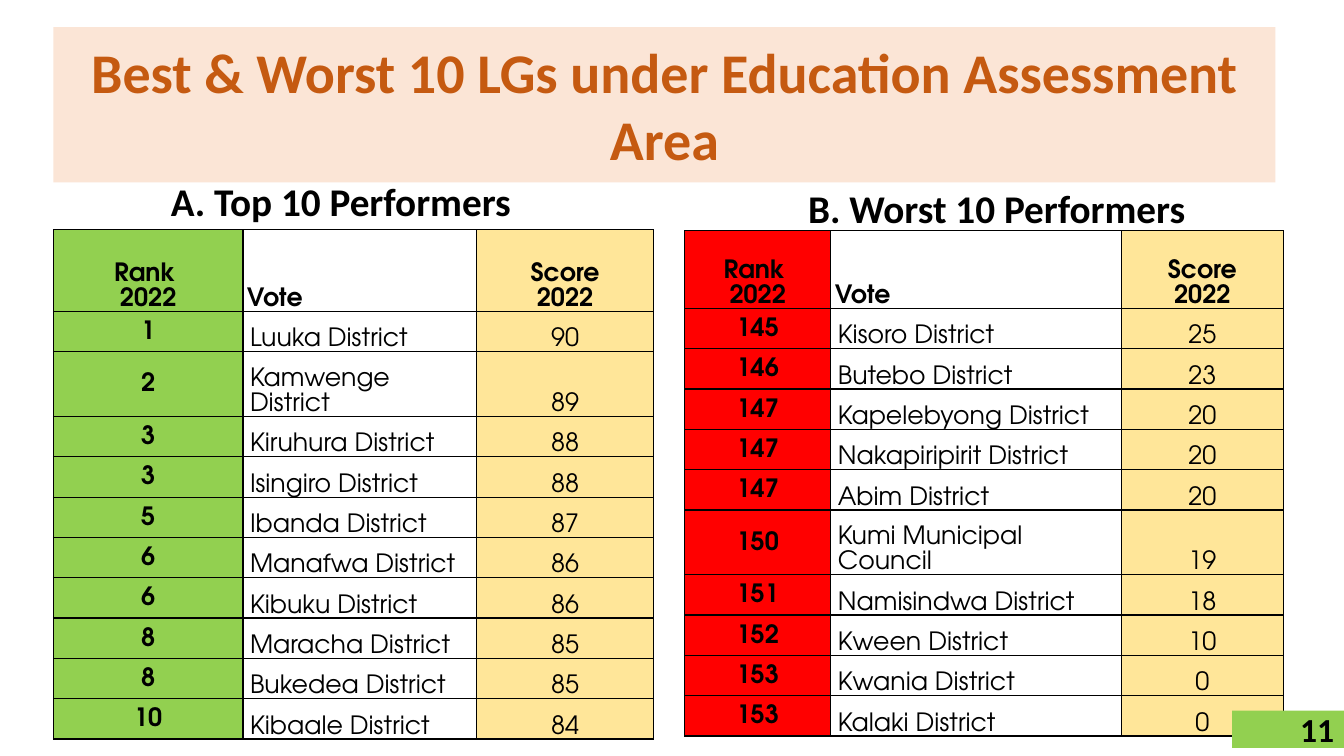
from lxml.etree import SubElement
from pptx import Presentation
from pptx.dml.color import RGBColor
from pptx.enum.shapes import MSO_SHAPE
from pptx.enum.text import MSO_ANCHOR as Anchor, MSO_AUTO_SIZE, PP_ALIGN as Align
from pptx.oxml.ns import qn
from pptx.util import Inches, Pt

COLORS = {
    "peach": "FBE5D6", "orange": "C55A11", "green": "92D050", "red": "FF0000",
    "yellow": "FFE699", "white": "FFFFFF", "black": "000000",
}
ROW_HEIGHT = 0.4
TABLE_WIDTH = 5.94
HEADING_WIDTH = 5.53
BORDER_WIDTH = Pt(1)


def write(frame, text, size=18, font="Calibri", color="black", bold=True,
          align=Align.CENTER, spacing=1.0, before=0):
    """Fill a text frame, one paragraph for each line of text."""
    frame.word_wrap = True
    for index, line in enumerate(text.split("\n")):
        paragraph = frame.add_paragraph() if index else frame.paragraphs[0]
        paragraph.alignment = align
        paragraph.line_spacing = spacing
        paragraph.space_before = Pt(before)
        run = paragraph.add_run()
        run.text = line
        run.font.size = Pt(size)
        run.font.name = font
        run.font.bold = bold
        run.font.color.rgb = RGBColor.from_string(COLORS[color])


def paint_cell(cell, color):
    """Give a cell thin black borders and a solid fill."""
    properties = cell._tc.get_or_add_tcPr()
    for side in ("a:lnL", "a:lnR", "a:lnT", "a:lnB"):
        line = SubElement(properties, qn(side), w=str(BORDER_WIDTH))
        SubElement(SubElement(line, qn("a:solidFill")), qn("a:srgbClr"), val=COLORS["black"])
    cell.fill.solid()
    cell.fill.fore_color.rgb = RGBColor.from_string(COLORS[color])


presentation = Presentation()
presentation.slide_width = Inches(13.33)
presentation.slide_height = Inches(7.5)
slide = presentation.slides.add_slide(presentation.slide_layouts[5])

title = slide.shapes.title
title.left, title.top = Inches(0.53), Inches(0.27)
title.width, title.height = Inches(12.12), Inches(1.54)
title.fill.solid()
title.fill.fore_color.rgb = RGBColor.from_string(COLORS["peach"])
title.text_frame.auto_size = MSO_AUTO_SIZE.NONE
title.text_frame.vertical_anchor = Anchor.MIDDLE
write(title.text_frame, "Best & Worst 10 LGs under Education Assessment Area",
      size=40, color="orange")

panels = [
    {
        "heading": "A. Top 10 Performers ", "heading_at": (0.66, 1.71),
        "table_at": (0.53, 2.28), "columns": (1.88, 2.32, 1.75),
        "header_height": 0.81, "tall_rows": {}, "rank_color": "green",
        "votes": [
            (1, "Luuka District", 90), (2, "Kamwenge District", 89),
            (3, "Kiruhura District", 88), (3, "Isingiro District", 88),
            (5, "Ibanda District", 87), (6, "Manafwa District", 86),
            (6, "Kibuku District", 86), (8, "Maracha District", 85),
            (8, "Bukedea District", 85), (10, "Kibaale District", 84),
        ],
    },
    {
        "heading": "B. Worst 10 Performers", "heading_at": (7.12, 1.78),
        "table_at": (6.79, 2.29), "columns": (1.45, 2.88, 1.61),
        "header_height": 0.77, "tall_rows": {6: 0.6}, "rank_color": "red",
        "votes": [
            (145, "Kisoro District", 25), (146, "Butebo District", 23),
            (147, "Kapelebyong District", 20), (147, "Nakapiripirit District", 20),
            (147, "Abim District", 20), (150, "Kumi Municipal Council", 19),
            (151, "Namisindwa District", 18), (152, "Kween District", 10),
            (153, "Kwania District", 0), (153, "Kalaki District", 0),
        ],
    },
]

for panel in panels:
    left, top = panel["heading_at"]
    heading = slide.shapes.add_textbox(Inches(left), Inches(top),
                                       Inches(HEADING_WIDTH), Inches(0.57))
    heading.text_frame.vertical_anchor = Anchor.BOTTOM
    write(heading.text_frame, panel["heading"], size=28, spacing=0.9, before=10)

    rows = [("Rank \n2022", "Vote", "Score\n2022"), *panel["votes"]]
    heights = [panel["header_height"]]
    heights += [panel["tall_rows"].get(row, ROW_HEIGHT) for row in range(1, len(rows))]
    left, top = panel["table_at"]
    table = slide.shapes.add_table(len(rows), 3, Inches(left), Inches(top),
                                   Inches(TABLE_WIDTH), Inches(sum(heights))).table
    for column, width in zip(table.columns, panel["columns"]):
        column.width = Inches(width)
    for row, height in zip(table.rows, heights):
        row.height = Inches(height)

    column_colors = (panel["rank_color"], "white", "yellow")
    for row_index, values in enumerate(rows):
        is_header = row_index == 0
        for column_index, value in enumerate(values):
            is_rank = column_index == 0
            cell = table.cell(row_index, column_index)
            cell.margin_left = cell.margin_right = Inches(0.04 if is_header else 0.07)
            cell.margin_top = cell.margin_bottom = 0
            cell.vertical_anchor = Anchor.MIDDLE if is_rank and not is_header else Anchor.BOTTOM
            write(cell.text_frame, str(value), font="TeX Gyre Adventor",
                  bold=is_header or is_rank, spacing=1.07,
                  align=Align.LEFT if column_index == 1 else Align.CENTER)
            paint_cell(cell, column_colors[column_index])

page_number = slide.shapes.add_shape(MSO_SHAPE.RECTANGLE, Inches(12.22), Inches(7.05),
                                     Inches(1.11), Inches(0.37))
page_number.shadow.inherit = False
page_number.fill.solid()
page_number.fill.fore_color.rgb = RGBColor.from_string(COLORS["green"])
page_number.line.fill.background()
page_number.text_frame.vertical_anchor = Anchor.MIDDLE
write(page_number.text_frame, "11", size=24, align=Align.RIGHT)

presentation.save("out.pptx")
